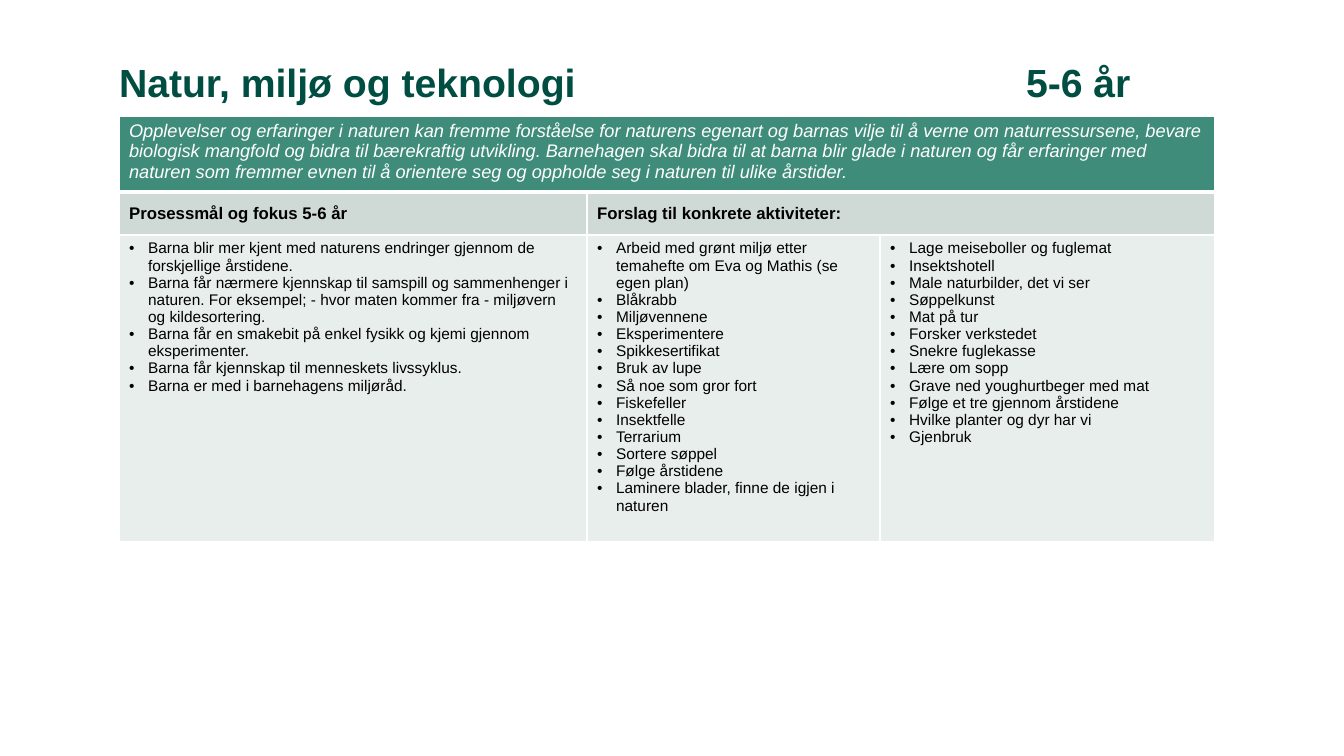
from lxml import etree
from pptx import Presentation
from pptx.dml.color import RGBColor
from pptx.enum.text import MSO_ANCHOR, MSO_AUTO_SIZE, PP_ALIGN
from pptx.oxml import parse_xml
from pptx.oxml.ns import nsdecls, qn
from pptx.util import Pt

LEFT = PP_ALIGN.LEFT
TOP, MIDDLE = MSO_ANCHOR.TOP, MSO_ANCHOR.MIDDLE
PX = 914400 / 100.8
GREEN, TEAL, SAGE, PALE = "004D42", "3F8C7B", "CFDAD7", "E8EEEC"
WHITE, BLACK = "FFFFFF", "000000"
COLS, ROWS = [468, 293, 335], [76, 43, 307]


def emu(px):
    return round(px * PX)


def add_run(para, text, size, color, bold=False, italic=False):
    run = para.add_run()
    run.text = text
    font = run.font
    font.name, font.size = "Arial", Pt(size)
    font.bold, font.italic = bold, italic
    font.color.rgb = RGBColor.from_string(color)


intro = (
    "Opplevelser og erfaringer i naturen kan fremme forståelse for naturens "
    "egenart og barnas vilje til å verne om naturressursene, bevare biologisk "
    "mangfold og bidra til bærekraftig utvikling. Barnehagen skal bidra til at "
    "barna blir glade i naturen og får erfaringer med naturen som fremmer evnen "
    "til å orientere seg og oppholde seg i naturen til ulike årstider."
)
heads = ["Prosessmål og fokus 5-6 år", "Forslag til konkrete aktiviteter:"]
lists = [
    [
        "Barna blir mer kjent med naturens endringer gjennom de forskjellige årstidene.",
        "Barna får nærmere kjennskap til samspill og sammenhenger i naturen. "
        "For eksempel; - hvor maten kommer fra - miljøvern og kildesortering.",
        "Barna får en smakebit på enkel fysikk og kjemi gjennom eksperimenter.",
        "Barna får kjennskap til menneskets livssyklus.",
        "Barna er med i barnehagens miljøråd.",
    ],
    [
        "Arbeid med grønt miljø etter temahefte om Eva og Mathis (se egen plan)",
        "Blåkrabb",
        "Miljøvennene",
        "Eksperimentere",
        "Spikkesertifikat",
        "Bruk av lupe",
        "Så noe som gror fort",
        "Fiskefeller",
        "Insektfelle",
        "Terrarium",
        "Sortere søppel",
        "Følge årstidene",
        "Laminere blader, finne de igjen i naturen",
    ],
    [
        "Lage meiseboller og fuglemat",
        "Insektshotell",
        "Male naturbilder, det vi ser",
        "Søppelkunst",
        "Mat på tur",
        "Forsker verkstedet",
        "Snekre fuglekasse",
        "Lære om sopp",
        "Grave ned youghurtbeger med mat",
        "Følge et tre gjennom årstidene",
        "Hvilke planter og dyr har vi",
        "Gjenbruk",
    ],
]

prs = Presentation()
prs.slide_width, prs.slide_height = emu(1344), emu(756)
slide = prs.slides.add_slide(prs.slide_layouts[5])

# Title, with the age group at a tab stop
title = slide.shapes.title
title.left, title.top, title.width, title.height = map(emu, (119, 54, 1159, 62))
frame = title.text_frame
frame.margin_left = frame.margin_right = frame.margin_top = frame.margin_bottom = 0
frame.vertical_anchor, frame.word_wrap = MIDDLE, True
frame.auto_size = MSO_AUTO_SIZE.NONE
para = frame.paragraphs[0]
tabs = etree.SubElement(para._p.get_or_add_pPr(), qn("a:tabLst"))
etree.SubElement(tabs, qn("a:tab"), pos=str(emu(907)), algn="l")
para.alignment, para.line_spacing = LEFT, 0.9
add_run(para, "Natur, miljø og teknologi\t5-6 år", 28, GREEN, bold=True)

# Table grid, fills and borders
table = slide.shapes.add_table(
    3, 3, emu(119), emu(116), emu(sum(COLS)), emu(sum(ROWS))
).table
for col, width in zip(table.columns, COLS):
    col.width = emu(width)
for row, height in zip(table.rows, ROWS):
    row.height = emu(height)
table.cell(0, 0).merge(table.cell(0, 2))
table.cell(1, 1).merge(table.cell(1, 2))

for r, (fill, anchor) in enumerate([(TEAL, TOP), (SAGE, MIDDLE), (PALE, TOP)]):
    for cell in table.rows[r].cells:
        props = cell._tc.get_or_add_tcPr()
        for side in ("lnL", "lnR", "lnT", "lnB"):
            thick = (r, side) in ((0, "lnB"), (1, "lnT"))
            props.append(parse_xml(
                f'<a:{side} {nsdecls("a")} w="{Pt(3 if thick else 1)}"><a:solidFill>'
                f'<a:srgbClr val="{WHITE}"/></a:solidFill></a:{side}>'
            ))
        cell.fill.solid()
        cell.fill.fore_color.rgb = RGBColor.from_string(fill)
        cell.vertical_anchor = anchor

# Table text
add_run(table.cell(0, 0).text_frame.paragraphs[0], intro, 13, WHITE, italic=True)
for c, head in enumerate(heads):
    add_run(table.cell(1, c).text_frame.paragraphs[0], head, 12, BLACK, bold=True)
for c, items in enumerate(lists):
    frame = table.cell(2, c).text_frame
    for i, item in enumerate(items):
        para = frame.add_paragraph() if i else frame.paragraphs[0]
        props = para._p.get_or_add_pPr()
        props.set("marL", str(emu(19)))
        props.set("indent", str(-emu(19)))
        etree.SubElement(props, qn("a:buFont"), typeface="Arial")
        etree.SubElement(props, qn("a:buChar"), char="•")
        add_run(para, item, 11, BLACK)

prs.save("out.pptx")
